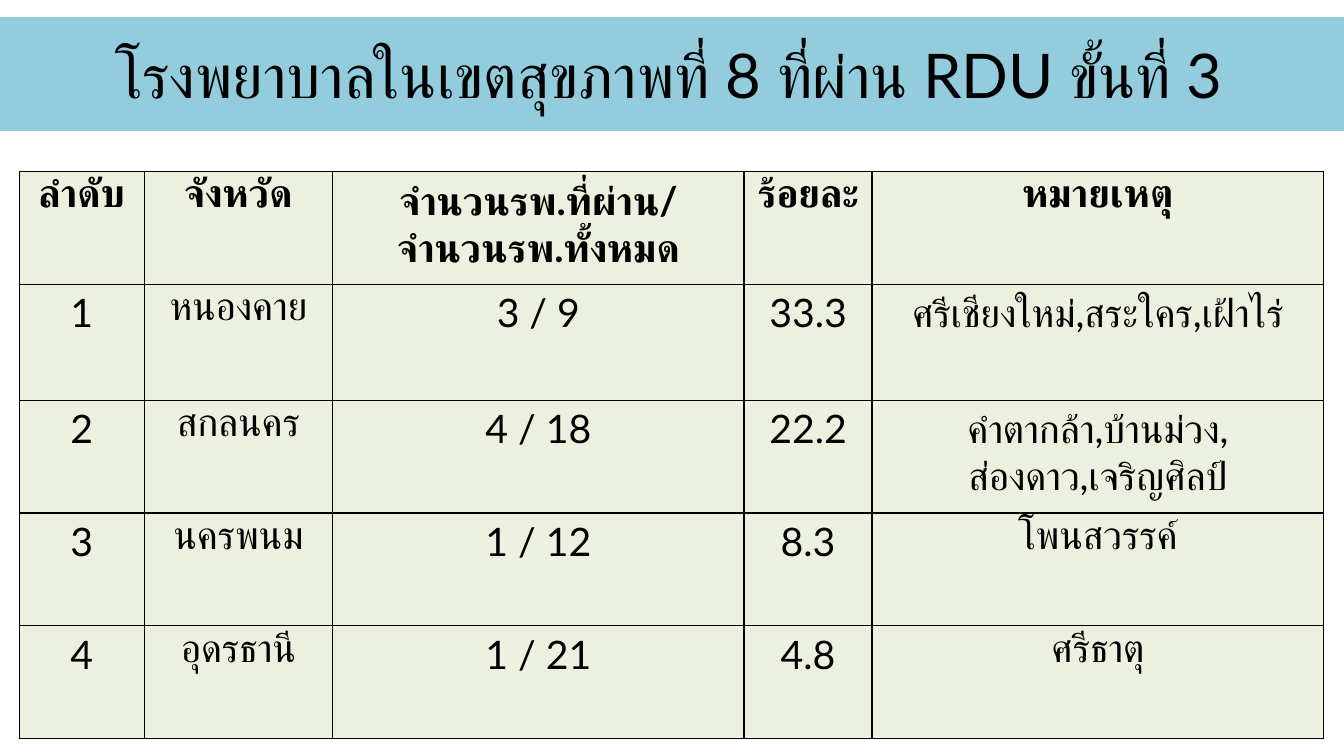
from lxml.etree import SubElement
from pptx import Presentation
from pptx.dml.color import RGBColor
from pptx.enum.shapes import MSO_SHAPE
from pptx.enum.text import MSO_ANCHOR, PP_ALIGN
from pptx.oxml.ns import qn
from pptx.util import Inches, Pt

COLORS = {"banner": "93CDDD", "cell": "EBF1DE", "ink": "000000"}
COLUMN_WIDTHS = [1.24, 1.87, 4.08, 1.27, 4.48]
ROW_HEIGHTS = [1.12, 1.15, 1.12, 1.12, 1.12]
HOSPITAL_ROWS = [
    ["ลำดับ", "จังหวัด", "จำนวนรพ.ที่ผ่าน/\nจำนวนรพ.ทั้งหมด", "ร้อยละ", "หมายเหตุ"],
    ["1", "หนองคาย", "3 / 9", "33.3", "ศรีเชียงใหม่,สระใคร,เฝ้าไร่"],
    ["2", "สกลนคร", "4 / 18", "22.2", "คำตากล้า,บ้านม่วง,\nส่องดาว,เจริญศิลป์"],
    ["3", "นครพนม", "1 / 12", "8.3", "โพนสวรรค์"],
    ["4", "อุดรธานี", "1 / 21", "4.8", "ศรีธาตุ"],
]


class SlideBuilder:
    """Draws styled elements on the current slide."""

    font = "Lato"

    def __init__(self, slide):
        self.slide = slide

    def color(self, name):
        return RGBColor.from_string(COLORS[name])

    def fill(self, target, name):
        target.fill.solid()
        target.fill.fore_color.rgb = self.color(name)

    def set_text(self, text_frame, text, size, bold=False):
        text_frame.text = text
        for paragraph in text_frame.paragraphs:
            paragraph.alignment = PP_ALIGN.CENTER
            for run in paragraph.runs:
                run.font.name = self.font
                run.font.size = Pt(size)
                run.font.bold = bold
                run.font.color.rgb = self.color("ink")

    def banner(self, left, top, width, height, text):
        shape = self.slide.shapes.add_shape(
            MSO_SHAPE.RECTANGLE, Inches(left), Inches(top), Inches(width), Inches(height))
        shape.shadow.inherit = False
        self.fill(shape, "banner")
        shape.line.fill.background()
        shape.text_frame.word_wrap = True
        shape.text_frame.vertical_anchor = MSO_ANCHOR.MIDDLE
        self.set_text(shape.text_frame, text, 44)

    def border(self, cell):
        properties = cell._tc.get_or_add_tcPr()
        for side in ("a:lnL", "a:lnR", "a:lnT", "a:lnB"):
            line = SubElement(properties, qn(side), w=str(Pt(1)))
            solid = SubElement(line, qn("a:solidFill"))
            SubElement(solid, qn("a:srgbClr"), val=COLORS["ink"])

    def table(self, left, top, widths, heights, rows):
        table = self.slide.shapes.add_table(
            len(heights), len(widths), Inches(left), Inches(top),
            Inches(sum(widths)), Inches(sum(heights))).table
        for column, width in zip(table.columns, widths):
            column.width = Inches(width)
        for row, height in zip(table.rows, heights):
            row.height = Inches(height)
        for row_index, texts in enumerate(rows):
            for column_index, text in enumerate(texts):
                cell = table.cell(row_index, column_index)
                self.border(cell)
                self.fill(cell, "cell")
                self.set_text(cell.text_frame, text, 28, bold=row_index == 0)


def main():
    presentation = Presentation()
    presentation.slide_width = Inches(13.33)
    presentation.slide_height = Inches(7.5)
    builder = SlideBuilder(presentation.slides.add_slide(presentation.slide_layouts[6]))
    builder.banner(-0.07, 0.17, 13.41, 1.13, "โรงพยาบาลในเขตสุขภาพที่ 8 ที่ผ่าน RDU ขั้นที่ 3")
    builder.table(0.19, 1.7, COLUMN_WIDTHS, ROW_HEIGHTS, HOSPITAL_ROWS)
    presentation.save("out.pptx")


if __name__ == "__main__":
    main()
